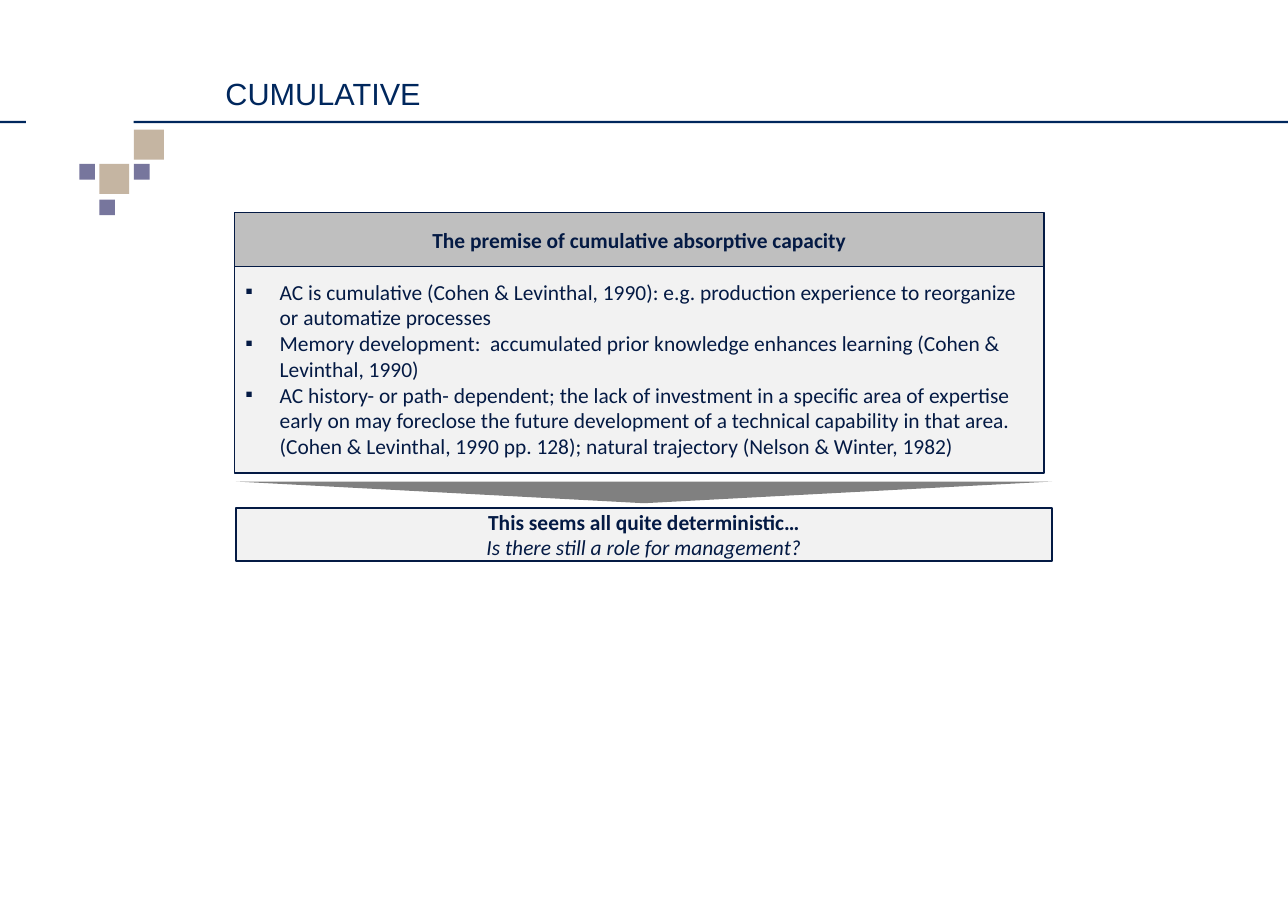
from dataclasses import dataclass

from lxml.etree import SubElement
from pptx import Presentation
from pptx.dml.color import RGBColor
from pptx.enum.shapes import MSO_SHAPE
from pptx.enum.text import MSO_ANCHOR, PP_ALIGN
from pptx.oxml.ns import qn
from pptx.shapes.autoshape import Shape
from pptx.slide import Slide
from pptx.text.text import TextFrame
from pptx.util import Cm, Pt

NAVY = RGBColor(0x00, 0x27, 0x5D)
INK = RGBColor(0x04, 0x1A, 0x44)
PURPLE = RGBColor(0x77, 0x76, 0x9D)
SAND = RGBColor(0xC5, 0xB5, 0xA2)
PALE = RGBColor(0xF2, 0xF2, 0xF2)
SILVER = RGBColor(0xBF, 0xBF, 0xBF)
GREY = RGBColor(0x80, 0x80, 0x80)

SMALL, LARGE, RULE = 0.36, 0.69, 0.05
INDENT = Cm(0.79)


@dataclass(frozen=True)
class Block:
    left: float
    top: float
    width: float
    height: float
    fill: RGBColor
    line: RGBColor | None = None


DECORATION = [
    Block(1.83, 3.78, SMALL, SMALL, PURPLE),
    Block(3.09, 2.99, LARGE, LARGE, SAND),
    Block(2.29, 3.78, LARGE, LARGE, SAND),
    Block(2.29, 4.6, SMALL, SMALL, PURPLE),
    Block(3.09, 3.78, SMALL, SMALL, PURPLE),
    Block(0, 2.79, 0.6, RULE, NAVY),
    Block(3.08, 2.79, 26.62, RULE, NAVY),
]
PREMISE_BODY = Block(5.41, 6.1, 18.67, 4.8, PALE, INK)
PREMISE_HEADER = Block(5.41, 4.9, 18.67, 1.24, SILVER, INK)
CONCLUSION = Block(5.44, 11.71, 18.82, 1.22, PALE, INK)
POINTER = Block(5.44, 11.1, 18.82, 0.5, GREY)

PREMISES = [
    "AC is cumulative (Cohen & Levinthal, 1990): e.g. production experience "
    "to reorganize or automatize processes",
    "Memory development:  accumulated prior knowledge enhances learning "
    "(Cohen & Levinthal, 1990)",
    "AC history- or path- dependent; the lack of investment in a specific area "
    "of expertise early on may foreclose the future development of a technical "
    "capability in that area. (Cohen & Levinthal, 1990 pp. 128); natural "
    "trajectory (Nelson & Winter, 1982)",
]


def add_block(s: Slide, block: Block, kind: MSO_SHAPE = MSO_SHAPE.RECTANGLE) -> Shape:
    sp = s.shapes.add_shape(
        kind, Cm(block.left), Cm(block.top), Cm(block.width), Cm(block.height)
    )
    sp.shadow.inherit = False
    sp.fill.solid()
    sp.fill.fore_color.rgb = block.fill
    if block.line is None:
        sp.line.fill.background()
    else:
        sp.line.color.rgb = block.line
        sp.line.width = Pt(1)
    sp.text_frame.vertical_anchor = MSO_ANCHOR.MIDDLE
    return sp


def add_text(
    tf: TextFrame,
    text: str,
    *,
    size: float = 14,
    font: str = "Calibri",
    color: RGBColor = INK,
    bold: bool = False,
    italic: bool = False,
    align: PP_ALIGN = PP_ALIGN.CENTER,
    bullet: str = "",
) -> None:
    p = tf.add_paragraph() if tf.text else tf.paragraphs[0]
    p.alignment = align
    if bullet:
        pPr = p._p.get_or_add_pPr()
        pPr.set("marL", str(INDENT))
        pPr.set("indent", str(-INDENT))
        SubElement(pPr, qn("a:buFont")).set("typeface", "Arial")
        SubElement(pPr, qn("a:buChar")).set("char", bullet)
    r = p.add_run()
    r.text = text
    r.font.size = Pt(size)
    r.font.name = font
    r.font.color.rgb = color
    r.font.bold = bold
    r.font.italic = italic


def add_title(s: Slide, text: str) -> None:
    tf = s.shapes.add_textbox(Cm(5.2), Cm(0.79), Cm(23.14), Cm(1.78)).text_frame
    tf.word_wrap = True
    tf.vertical_anchor = MSO_ANCHOR.BOTTOM
    tf.margin_left = tf.margin_top = tf.margin_right = tf.margin_bottom = 0
    add_text(tf, text, size=20, font="Arial", color=NAVY, align=PP_ALIGN.LEFT)


def main() -> None:
    prs = Presentation()
    prs.slide_width, prs.slide_height = Cm(29.7), Cm(21)
    s = prs.slides.add_slide(prs.slide_layouts[6])

    for block in DECORATION:
        add_block(s, block)
    add_title(s, "CUMULATIVE")

    body = add_block(s, PREMISE_BODY).text_frame
    for premise in PREMISES:
        add_text(body, premise, align=PP_ALIGN.LEFT, bullet="▪")

    header = add_block(s, PREMISE_HEADER).text_frame
    add_text(header, "The premise of cumulative absorptive capacity", bold=True)

    conclusion = add_block(s, CONCLUSION).text_frame
    add_text(conclusion, "This seems all quite deterministic…", bold=True)
    add_text(conclusion, "Is there still a role for management?", italic=True)

    add_block(s, POINTER, MSO_SHAPE.ISOSCELES_TRIANGLE).rotation = 180
    prs.save("out.pptx")


if __name__ == "__main__":
    main()
